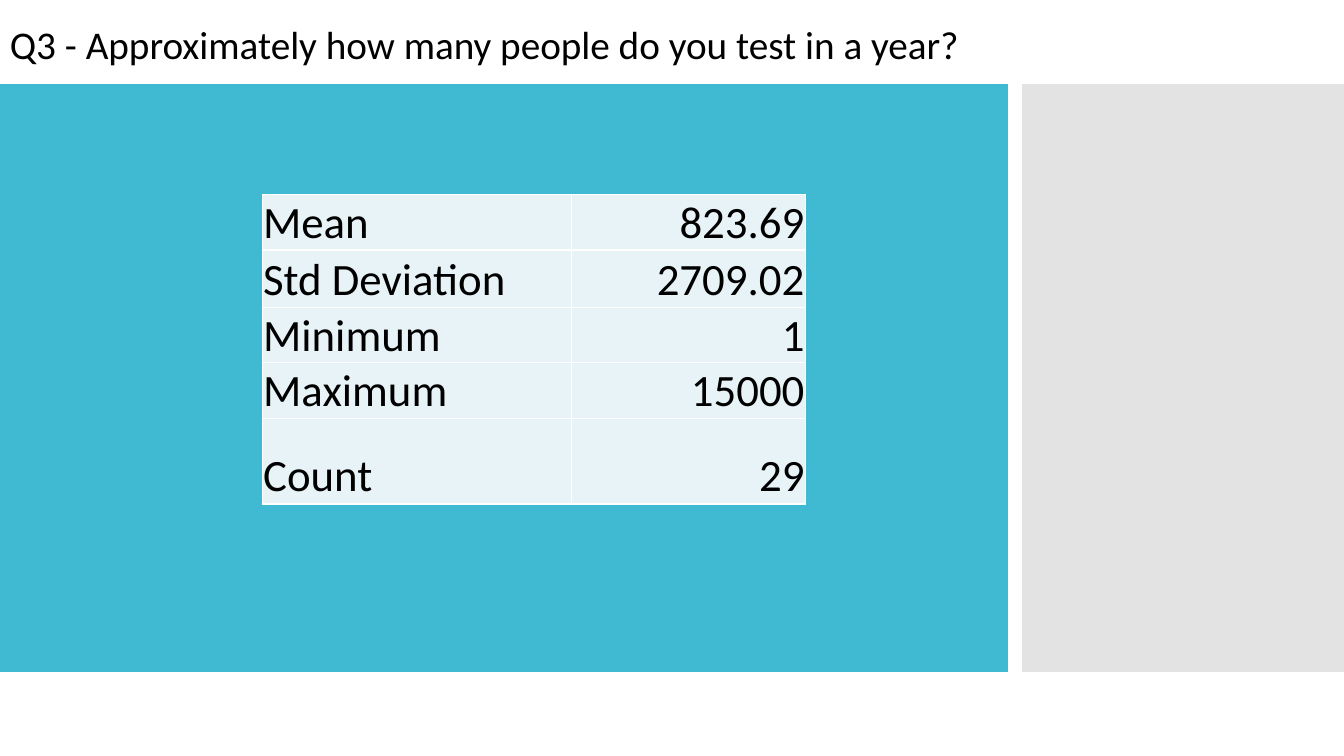
import pptx
import pptx.util
import pptx.dml.color
import pptx.enum.shapes
import pptx.enum.text
import pptx.oxml
import pptx.oxml.ns

TITLE = "Q3 - Approximately how many people do you test in a year?"
STATS = [
    ("Mean", "823.69"),
    ("Std Deviation", "2709.02"),
    ("Minimum", "1"),
    ("Maximum", "15000"),
    ("Count", "29"),
]
COLORS = {"main": "40BAD2", "side": "C8C8C8", "cell": "E8F3F7",
          "edge": "FFFFFF", "text": "000000"}
FONT = "Calibri"
WIDTH, HEIGHT = 13.33, 7.5
BAND = HEIGHT / 9          # height of the strips above and below the panels
SPLIT = WIDTH * 0.75       # right edge of the main panel
GAP = 0.14
COLS = [3.07, 2.32]
ROWS = [0.55, 0.57, 0.55, 0.55, 0.85]

inch = pptx.util.Inches
ALIGN = pptx.enum.text.PP_ALIGN


def color(name):
    return pptx.dml.color.RGBColor.from_string(COLORS[name])


def panel(slide, left, width, name):
    box = slide.shapes.add_shape(
        pptx.enum.shapes.MSO_SHAPE.RECTANGLE,
        inch(left), inch(BAND), inch(width), inch(HEIGHT - 2 * BAND))
    box.shadow.inherit = False
    box.fill.solid()
    box.fill.fore_color.rgb = color(name)
    box.line.fill.background()
    return box


def fade(box, share):
    """Set the opacity of a solid fill."""
    tone = box.fill._xPr.find(".//" + pptx.oxml.ns.qn("a:srgbClr"))
    alpha = pptx.oxml.parse_xml(
        f'<a:alpha {pptx.oxml.ns.nsdecls("a")} val="{share * 1000}"/>')
    tone.append(alpha)


def write(frame, text, size, align=ALIGN.LEFT):
    para = frame.paragraphs[0]
    para.alignment = align
    run = para.add_run()
    run.text = text
    run.font.name = FONT
    run.font.size = pptx.util.Pt(size)
    run.font.color.rgb = color("text")


def border(cell):
    props = cell._tc.get_or_add_tcPr()
    for spot, side in enumerate(("L", "R", "T", "B")):
        props.insert(spot, pptx.oxml.parse_xml(
            f'<a:ln{side} {pptx.oxml.ns.nsdecls("a")} w="12700"><a:solidFill>'
            f'<a:srgbClr val="{COLORS["edge"]}"/></a:solidFill></a:ln{side}>'))


def add_stats(slide, left, top):
    table = slide.shapes.add_table(
        len(ROWS), len(COLS), inch(left), inch(top),
        inch(sum(COLS)), inch(sum(ROWS))).table
    table.first_row = table.horz_banding = False
    for col, width in zip(table.columns, COLS):
        col.width = inch(width)
    for row, height, pair in zip(table.rows, ROWS, STATS):
        row.height = inch(height)
        for cell, text, align in zip(row.cells, pair, (ALIGN.LEFT, ALIGN.RIGHT)):
            cell.margin_left = cell.margin_right = cell.margin_top = inch(0.01)
            cell.margin_bottom = 0
            cell.vertical_anchor = pptx.enum.text.MSO_ANCHOR.BOTTOM
            cell.fill.solid()
            cell.fill.fore_color.rgb = color("cell")
            border(cell)
            write(cell.text_frame, text, 32, align)


def main():
    deck = pptx.Presentation()
    deck.slide_width, deck.slide_height = inch(WIDTH), inch(HEIGHT)
    slide = deck.slides.add_slide(deck.slide_layouts[6])
    panel(slide, 0, SPLIT, "main")
    start = SPLIT + GAP
    fade(panel(slide, start, WIDTH - start, "side"), 50)
    title = slide.shapes.add_textbox(0, inch(0.15), inch(10.96), inch(0.4))
    title.text_frame.word_wrap = True
    write(title.text_frame, TITLE, 28)
    add_stats(slide, 2.6, 1.93)
    deck.save("out.pptx")


if __name__ == "__main__":
    main()
